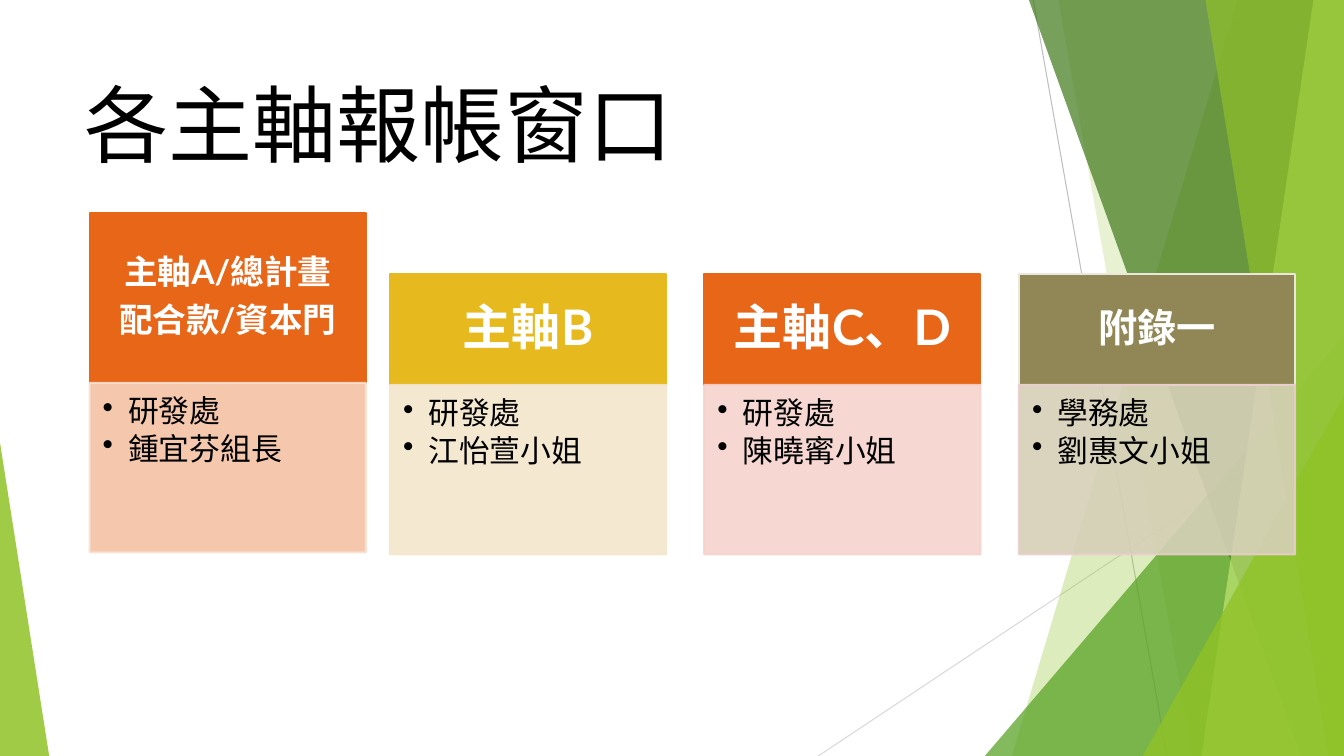
from lxml import etree
from pptx import Presentation
from pptx import util as u
from pptx.dml.color import RGBColor
from pptx.enum import shapes, text
from pptx.oxml.ns import qn

FONT = "Lato"
RIGHT, BOTTOM = 33.87, 19.05


def paint(fill, colour, opacity=100):
    """Make a fill solid in a hex colour, with opacity in percent."""
    fill.solid()
    fill.fore_color.rgb = RGBColor.from_string(colour)
    if opacity < 100:
        solid = fill._xPr.find(qn("a:solidFill"))
        etree.SubElement(solid[0], qn("a:alpha"), val=str(opacity * 1000))


def write(frame, lines, size, colour, bold=False, space_after=0.0):
    """Fill a text frame with paragraphs; space_after is a share of the size."""
    frame.word_wrap = True
    frame.text = "\n".join(lines)
    for para in frame.paragraphs:
        para.space_after = u.Pt(size * space_after)
        for span in para.runs:
            span.font.name = FONT
            span.font.size = u.Pt(size)
            span.font.bold = bold
            paint(span.font.fill, colour)


deck = Presentation()
deck.slide_width, deck.slide_height = u.Cm(RIGHT), u.Cm(BOTTOM)
page = deck.slides.add_slide(deck.slide_layouts[5])

# Thin background lines
for x1, y1, x2, y2, colour in [
    (26.04, 0, 29.41, BOTTOM, "BFBFBF"),
    (RIGHT, 10.24, 20.62, BOTTOM, "D9D9D9"),
]:
    line = page.shapes.add_connector(
        shapes.MSO_CONNECTOR.STRAIGHT, u.Cm(x1), u.Cm(y1), u.Cm(x2), u.Cm(y2))
    line.line.width = u.Pt(0.75)
    paint(line.line.fill, colour)
    etree.SubElement(line._element.spPr, qn("a:effectLst"))

# Translucent facets: bands as (top left, bottom left), running to the right
# edge, and triangles as (left, apex x, apex y, right)
facets = [
    ("90C226", 30, (31.19, 25.5)),
    ("90C226", 20, (26.67, 30.05)),
    ("54A021", 72, (24.82, RIGHT, 8.46, RIGHT)),
    ("3F7819", 70, (25.93, 32.79)),
    ("C0E474", 70, (33.1, 30.28)),
    ("90C226", 65, (30.38, 33.48)),
    ("90C226", 80, (28.8, RIGHT, 9.98, RIGHT)),
    ("90C226", 85, (0, 0, 11.15, 1.24)),
]
for colour, opacity, points in facets:
    if len(points) == 2:
        top_x, bottom_x = points
        outline = page.shapes.build_freeform(u.Cm(top_x), 0)
        outline.add_line_segments([
            (u.Cm(x), u.Cm(y)) for x, y in
            [(RIGHT, 0), (RIGHT, BOTTOM), (bottom_x, BOTTOM)]])
        facet = outline.convert_to_shape()
    else:
        left, apex_x, apex_y, right = points
        facet = page.shapes.add_shape(
            shapes.MSO_SHAPE.ISOSCELES_TRIANGLE, u.Cm(left), u.Cm(apex_y),
            u.Cm(right - left), u.Cm(BOTTOM - apex_y))
        facet.adjustments[0] = (apex_x - left) / (right - left)
    facet.shadow.inherit = False
    facet.line.fill.background()
    paint(facet.fill, colour, opacity)

title = page.shapes.title
title.left, title.top = u.Cm(1.88), u.Cm(1.7)
title.width, title.height = u.Cm(23.88), u.Cm(3.66)
write(title.text_frame, ["各主軸報帳窗口"], 60, "000000")
title.text_frame.vertical_anchor = text.MSO_ANCHOR.TOP
title.text_frame.paragraphs[0].alignment = text.PP_ALIGN.LEFT

# Columns: left, header top, body top, header lines, header size,
# header fill and line, contact, body fill and line
columns = [
    (2.26, 5.36, 9.65, ["主軸A/總計畫", "配合款/資本門"], 24,
     "E76618", "E76618", ["研發處", "鍾宜芬組長"], "F5C2A3", "FAE0D1"),
    (9.83, 6.91, 9.7, ["主軸B"], 35,
     "E6B91E", "E6B91E", ["研發處", "江怡萱小姐"], "F5E6CD", "F5E6CD"),
    (17.75, 6.91, 9.7, ["主軸C、D"], 35,
     "E76618", "E76618", ["研發處", "陳曉寗小姐"], "F6D3CC", "F6D3CC"),
    (25.68, 6.91, 9.7, ["附錄一"], 28,
     "918655", "EAE8DC", ["學務處", "劉惠文小姐"], "D6D0B8", "EACDCD"),
]
COLUMN_WIDTH, BODY_HEIGHT = 6.96, 4.27
for (left, header_top, body_top, heading, size, header_fill, header_line,
     contact, body_fill, body_line) in columns:
    side = size * 0.02
    parts = [
        (header_top, body_top - header_top, header_fill, header_line, 100,
         (side, side * 4 / 7, side, side * 4 / 7)),
        (body_top, BODY_HEIGHT, body_fill, body_line, 90,
         (0.33, 0.33, 0.43, 0.48)),
    ]
    boxes = []
    for top, height, fill, edge, opacity, insets in parts:
        box = page.shapes.add_shape(
            shapes.MSO_SHAPE.RECTANGLE, u.Cm(left), u.Cm(top),
            u.Cm(COLUMN_WIDTH), u.Cm(height))
        box.shadow.inherit = False
        box.line.width = u.Pt(1.5)
        paint(box.fill, fill, opacity)
        paint(box.line.fill, edge, opacity)
        frame = box.text_frame
        (frame.margin_left, frame.margin_top, frame.margin_right,
         frame.margin_bottom) = [u.Cm(inset) for inset in insets]
        boxes.append(box)

    header, body = [box.text_frame for box in boxes]
    write(header, heading, size, "FFFFFF", bold=True, space_after=0.35)
    header.vertical_anchor = text.MSO_ANCHOR.MIDDLE
    for para in header.paragraphs:
        para.alignment = text.PP_ALIGN.CENTER
        para.line_spacing = 0.9

    write(body, contact, 22, "000000", space_after=0.15)
    body.vertical_anchor = text.MSO_ANCHOR.TOP
    for para in body.paragraphs:
        para.alignment = text.PP_ALIGN.LEFT
        para.line_spacing = 0.9
        props = para._p.get_or_add_pPr()
        props.set("marL", str(u.Cm(0.64)))
        props.set("indent", str(-u.Cm(0.64)))
        etree.SubElement(props, qn("a:buChar"), char="•")

deck.save("out.pptx")
